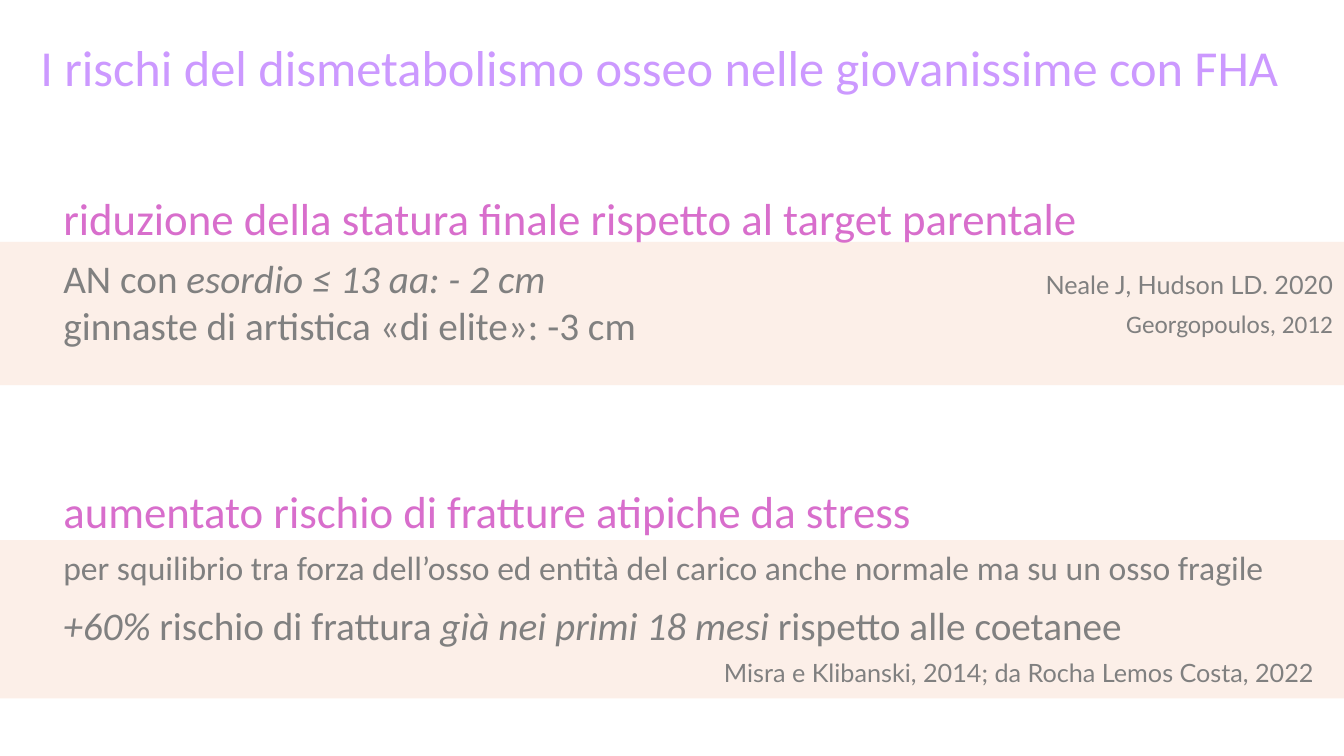
from lxml.etree import SubElement
from pptx import Presentation
from pptx.dml.color import RGBColor
from pptx.enum.shapes import MSO_SHAPE
from pptx.enum.text import MSO_ANCHOR, MSO_AUTO_SIZE, PP_ALIGN
from pptx.oxml.ns import qn
from pptx.util import Inches, Pt

LILAC, PINK, GREY, PEACH = "CC99FF", "D86ECC", "808080", "FBE3D6"
LEFT = 0.53


def color(code):
    return RGBColor.from_string(code)


def add_band(slide, left, top, height):
    """Draw a pale band across the slide."""
    band = slide.shapes.add_shape(MSO_SHAPE.RECTANGLE, Inches(left), Inches(top),
                                  Inches(13.75), Inches(height))
    band.shadow.inherit = False
    band.line.fill.background()
    band.fill.solid()
    band.fill.fore_color.rgb = color(PEACH)
    tone = band.fill._xPr.find(qn("a:solidFill"))[0]
    SubElement(tone, qn("a:alpha"), val="55000")


def set_frame(shape):
    frame = shape.text_frame
    frame.word_wrap = True
    frame.auto_size = MSO_AUTO_SIZE.SHAPE_TO_FIT_TEXT
    frame.vertical_anchor = MSO_ANCHOR.TOP
    return frame


def set_font(para, size, code, name="Calibri", align=PP_ALIGN.LEFT):
    para.alignment = align
    para.font.size = Pt(size)
    para.font.name = name
    para.font.color.rgb = color(code)


def add_runs(para, parts):
    """Write (text, italic) parts into one paragraph."""
    for text, slant in parts:
        run = para.add_run()
        run.text = text
        run.font.italic = slant


def add_text(slide, left, top, width, height, parts, size, code=GREY, **style):
    box = slide.shapes.add_textbox(Inches(left), Inches(top),
                                   Inches(width), Inches(height))
    frame = set_frame(box)
    para = frame.paragraphs[0]
    add_runs(para, parts)
    set_font(para, size, code, **style)
    return frame


def add_line(frame, parts, size, before=0):
    para = frame.add_paragraph()
    add_runs(para, parts)
    set_font(para, size, GREY)
    para.space_before = Pt(before)


def add_cite(slide, left, top, width, height, text, name="Lato"):
    add_text(slide, left, top, width, height, [(text, False)], 18,
             name=name, align=PP_ALIGN.RIGHT)


def add_title(slide, text):
    title = slide.shapes.title
    title.left, title.top = Inches(0.3), Inches(0.31)
    title.width, title.height = Inches(12.49), Inches(0.71)
    frame = set_frame(title)
    frame.text = text
    set_font(frame.paragraphs[0], 36, LILAC)


def main():
    deck = Presentation()
    deck.slide_width, deck.slide_height = Inches(13.33), Inches(7.5)
    slide = deck.slides.add_slide(deck.slide_layouts[5])

    # Bands and title
    add_band(slide, -0.1, 2.4, 1.42)
    add_band(slide, -0.2, 5.36, 1.57)
    add_title(slide, "I rischi del dismetabolismo osseo nelle giovanissime con FHA")

    # Final height
    frame = add_text(slide, LEFT, 1.84, 12.25, 1.68, [
        ("riduzione della statura finale rispetto al target parentale", False)],
        32, PINK)
    add_line(frame, [("AN con ", False), ("esordio ≤ 13 aa: - 2 cm", True)], 28, 7)
    add_line(frame, [("ginnaste di artistica «di elite»: -3 cm", False)], 28)
    add_cite(slide, 6.65, 2.62, 6.67, 0.4, "Neale J, Hudson LD. 2020")
    add_cite(slide, 6.4, 3.01, 6.92, 0.4, "Georgopoulos, 2012", "Calibri")

    # Stress fractures
    add_text(slide, LEFT, 4.75, 9.05, 0.64, [
        ("aumentato rischio di fratture atipiche da stress", False)], 32, PINK)
    add_text(slide, LEFT, 5.38, 12.22, 0.5, [
        ("per squilibrio tra forza dell’osso ed entità del carico "
         "anche normale ma su un osso fragile", False)], 24)
    add_text(slide, LEFT, 5.92, 11.52, 0.57, [
        ("+60% ", True), ("rischio di frattura ", False),
        ("già nei primi 18 mesi ", True), ("rispetto alle coetanee", False)], 28)
    add_cite(slide, 5.57, 6.47, 7.56, 0.4,
             "Misra e Klibanski, 2014; da Rocha Lemos Costa, 2022")

    deck.save("out.pptx")


if __name__ == "__main__":
    main()
